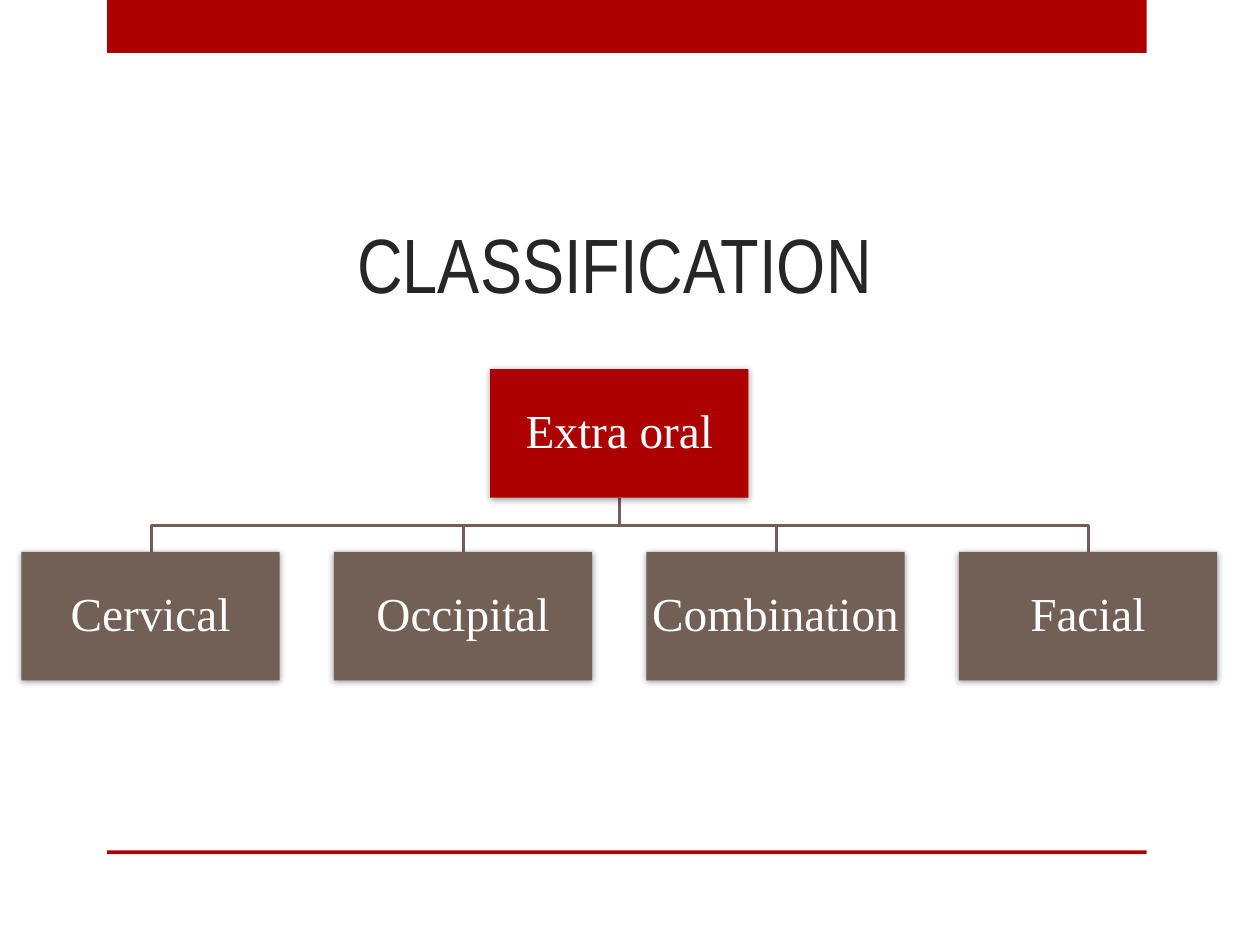
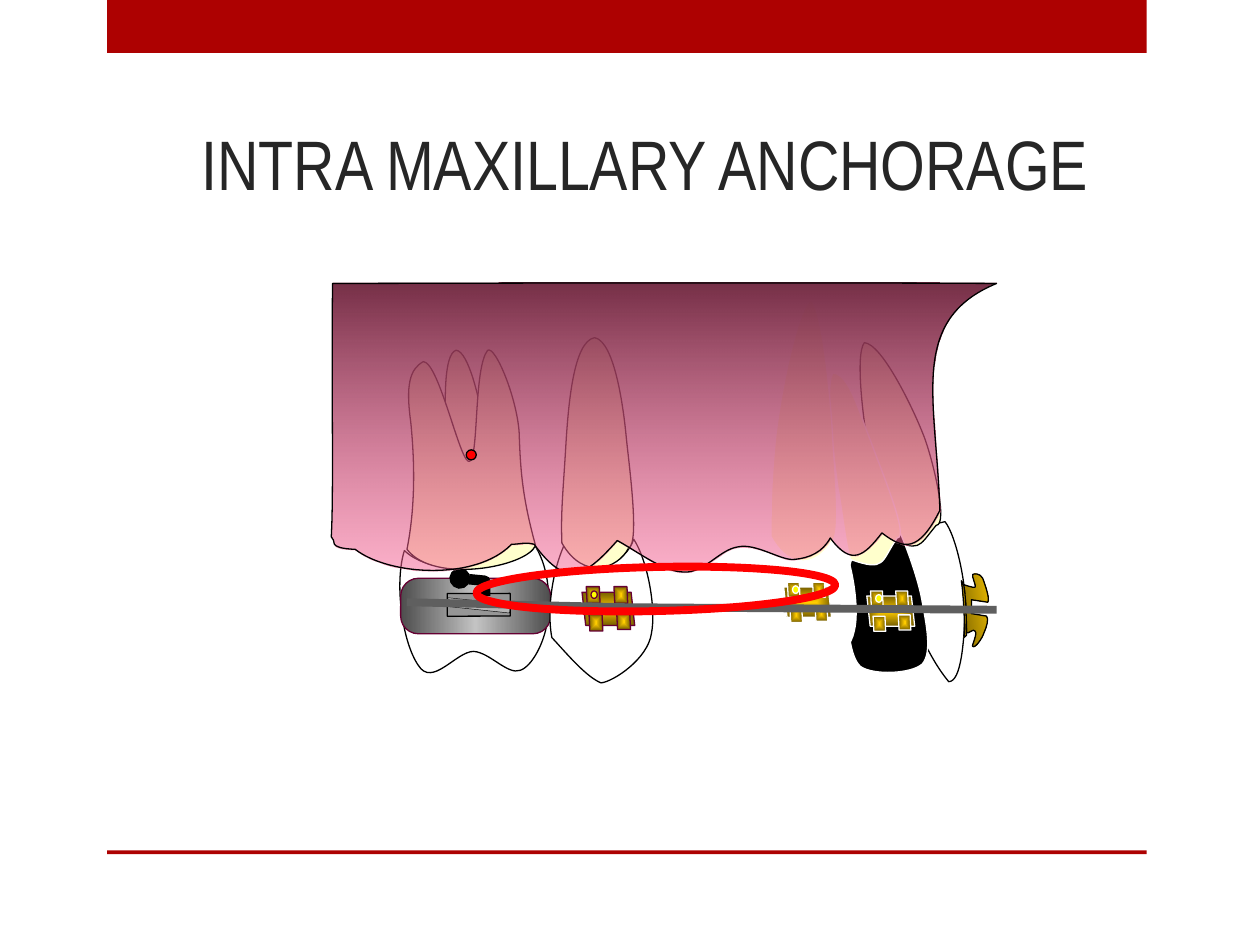
from dataclasses import dataclass
from itertools import islice
from math import cos, radians, sin
from typing import Optional

from lxml.etree import SubElement
from pptx import Presentation
from pptx.dml.color import RGBColor
from pptx.enum.shapes import MSO_SHAPE
from pptx.enum.text import MSO_ANCHOR, PP_ALIGN
from pptx.oxml.ns import qn
from pptx.util import Cm, Pt

RED = RGBColor(0xAD, 0x01, 0x01)
TAUPE = RGBColor(0x72, 0x60, 0x56)
INK = RGBColor(0x26, 0x26, 0x26)
WHITE = RGBColor(0xFF, 0xFF, 0xFF)
BLACK = RGBColor(0x00, 0x00, 0x00)
IVORY = RGBColor(0xFF, 0xFF, 0xCC)
GOLD = RGBColor(0xFF, 0xCC, 0x00)
DARK_GOLD = RGBColor(0x76, 0x5E, 0x00)
YELLOW = RGBColor(0xFF, 0xFF, 0x00)
PLUM = RGBColor(0x66, 0x00, 0x33)
DARK_STEEL = RGBColor(0x4D, 0x4D, 0x4D)
STEEL = RGBColor(0xC3, 0xC3, 0xC3)
SLOT_GREY = RGBColor(0x96, 0x96, 0x96)
WIRE_GREY = RGBColor(0x5F, 0x5F, 0x5F)
GUM_DARK = RGBColor(0x76, 0x2F, 0x47)
GUM_PINK = RGBColor(0xFF, 0x66, 0x99)
ELASTIC_RED = RGBColor(0xFF, 0x00, 0x00)


@dataclass
class Gradient:
    """Stops are (percent, colour, opacity percent); no angle means centre outwards."""
    stops: tuple
    angle: Optional[int] = None


HOOK_GOLD = Gradient(((0, DARK_GOLD, 100), (100, GOLD, 100)), 0)
BRACKET_GOLD = Gradient(((0, GOLD, 100), (100, DARK_GOLD, 100)))
BAND_STEEL = Gradient(((0, DARK_STEEL, 100), (50, STEEL, 100), (100, DARK_STEEL, 100)), 0)
GUM = Gradient(((0, GUM_DARK, 100), (100, GUM_PINK, 50)), 90)

# Outlines in inches: a start point, then lines (x, y) and cubic curves (three points).
INCISOR_CROWN = [
    (7.12, 4.23), (7.04, 4.35, 7.01, 4.68, 7.08, 4.88), (7.35, 4.98, 7.31, 5.14, 7.53, 5.41),
    (7.63, 5.41, 7.65, 5.09, 7.66, 4.88), (7.68, 4.67, 7.59, 4.25, 7.5, 4.14), (7.12, 4.23)]
INCISOR_ROOT = [
    (6.92, 3.71), (6.98, 3.99, 6.98, 4.05, 7.04, 4.27), (7.31, 4.38, 7.28, 4.35, 7.43, 4.17),
    (7.53, 4.17, 7.4, 3.62, 7.32, 3.43), (7.24, 3.23, 7, 2.73, 6.86, 2.72),
    (6.78, 2.82, 6.86, 3.43, 6.92, 3.71)]
INCISOR_HOOK = [
    (7.65, 4.64), (7.65, 4.64, 7.73, 4.67, 7.74, 4.66), (7.75, 4.65, 7.71, 4.57, 7.72, 4.56),
    (7.73, 4.55, 7.78, 4.55, 7.8, 4.59), (7.81, 4.62, 7.86, 4.75, 7.84, 4.78), (7.71, 4.76),
    (7.71, 4.87), (7.83, 4.89), (7.85, 4.91, 7.83, 4.98, 7.81, 5.02),
    (7.8, 5.06, 7.74, 5.15, 7.72, 5.13), (7.71, 5.13, 7.76, 5.03, 7.74, 5.01),
    (7.73, 4.98, 7.68, 5.04, 7.67, 5.02), (7.67, 4.84), (7.65, 4.64)]
INCISOR_PAD = [
    (7.65, 4.65), (7.64, 4.64, 7.65, 4.62, 7.63, 4.61), (7.65, 4.74, 7.66, 5, 7.65, 5.06),
    (7.68, 5.04, 7.67, 5.04, 7.67, 5.03), (7.67, 5, 7.67, 4.75, 7.65, 4.65)]
MOLAR_CROWN = [
    (3.21, 4.37), (3.13, 4.62, 3.19, 5.09, 3.32, 5.28), (3.43, 5.46, 3.62, 5.17, 3.76, 5.17),
    (3.89, 5.18, 4.03, 5.36, 4.13, 5.32), (4.22, 5.29, 4.33, 5.1, 4.35, 4.89),
    (4.37, 4.68, 4.34, 4.44, 4.21, 4.28), (4.16, 4.49, 3.47, 4.62, 3.21, 4.37)]
MOLAR_BACK_ROOT = [
    (3.54, 3.45), (3.56, 3.71, 3.56, 3.83, 3.59, 4.01), (3.72, 4.22, 3.87, 4.13, 3.91, 4),
    (3.96, 3.97, 3.86, 3.5, 3.83, 3.34), (3.81, 3.19, 3.72, 2.79, 3.62, 2.78),
    (3.52, 2.81, 3.53, 3.19, 3.54, 3.45)]
MOLAR_ROOTS = [
    (3.73, 3.66), (3.66, 3.72, 3.49, 2.88, 3.36, 2.87), (3.25, 2.93, 3.22, 3.06, 3.26, 3.35),
    (3.29, 3.65, 3.3, 4.01, 3.23, 4.36), (3.44, 4.64, 4.18, 4.5, 4.25, 4.33),
    (4.14, 3.93, 4.13, 3.71, 4.12, 3.43), (4.1, 3.15, 3.93, 2.74, 3.87, 2.78),
    (3.76, 2.92, 3.8, 3.61, 3.73, 3.66)]
MOLAR_HOOK = [(3.85, 4.73), (3.85, 4.61), (3.65, 4.59)]
LATERAL_CROWN = [
    (7.14, 4.22), (7.19, 4.33, 7.29, 4.6, 7.32, 4.78), (7.35, 4.95, 7.4, 5.18, 7.32, 5.27),
    (7.23, 5.35, 6.93, 5.36, 6.83, 5.29), (6.74, 5.21, 6.73, 4.95, 6.72, 4.8),
    (6.71, 4.66, 6.73, 4.49, 6.77, 4.42), (6.81, 4.36, 6.91, 4.44, 6.97, 4.41),
    (7.03, 4.38, 7.11, 4.26, 7.14, 4.22)]
LATERAL_ROOT = [
    (6.65, 3.87), (6.68, 4.02, 6.71, 4.31, 6.75, 4.44), (7.03, 4.54, 6.99, 4.46, 7.12, 4.27),
    (7.22, 4.27, 7, 3.75, 6.91, 3.5), (6.81, 3.25, 6.74, 2.97, 6.61, 2.96),
    (6.54, 3.07, 6.63, 3.71, 6.65, 3.87)]
CANINE_CROWN = [
    (6.17, 4.25), (6.05, 4.49, 5.98, 4.88, 6.01, 5.09), (6.12, 5.22, 6.21, 5.39, 6.33, 5.5),
    (6.43, 5.49, 6.74, 5.21, 6.78, 5.01), (6.83, 4.81, 6.75, 4.38, 6.64, 4.21),
    (6.57, 4.4, 6.39, 4.53, 6.17, 4.25)]
CANINE_ROOT = [
    (6.15, 3.54), (6.12, 3.88, 6.12, 4.02, 6.12, 4.26), (6.28, 4.55, 6.5, 4.47, 6.6, 4.3),
    (6.68, 4.26, 6.62, 3.7, 6.61, 3.49), (6.6, 3.28, 6.54, 2.5, 6.44, 2.38),
    (6.33, 2.43, 6.18, 3.19, 6.15, 3.54)]
PREMOLAR_CROWN = [
    (4.49, 4.3), (4.38, 4.53, 4.34, 4.85, 4.38, 5.06), (4.5, 5.19, 4.65, 5.37, 4.77, 5.42),
    (4.87, 5.41, 5.14, 5.23, 5.17, 5.03), (5.21, 4.83, 5.14, 4.45, 5.03, 4.28),
    (4.96, 4.48, 4.72, 4.58, 4.49, 4.3)]
PREMOLAR_ROOT = [
    (4.49, 3.56), (4.47, 3.9, 4.45, 4.07, 4.46, 4.31), (4.63, 4.61, 4.9, 4.52, 4.99, 4.35),
    (5.08, 4.31, 4.99, 3.67, 4.97, 3.46), (4.95, 3.25, 4.88, 2.71, 4.72, 2.68),
    (4.55, 2.71, 4.51, 3.22, 4.49, 3.56)]
GUM_OUTLINE = [
    (2.63, 4.26), (2.68, 4.29, 2.58, 4.35, 2.82, 4.36), (3.09, 4.57, 3.78, 4.61, 4.06, 4.32),
    (4.13, 4.32, 4.17, 4.3, 4.24, 4.32), (4.5, 4.68, 4.65, 4.57, 4.9, 4.29),
    (5.08, 4.39, 5.27, 4.54, 5.43, 4.54), (5.59, 4.55, 5.71, 4.36, 5.86, 4.34),
    (6, 4.31, 6.2, 4.45, 6.3, 4.44), (6.43, 4.43, 6.53, 4.38, 6.59, 4.27),
    (6.76, 4.5, 6.86, 4.41, 7, 4.23), (7.17, 4.36, 7.29, 4.39, 7.46, 4.05),
    (7.43, 3.15, 7.21, 2.54, 7.91, 2.25), (5.88, 2.24, 3.32, 2.25, 2.64, 2.25),
    (2.63, 3.01, 2.65, 3.91, 2.63, 4.26)]
ARCH_WIRE = [(3.23, 4.78), (4.97, 4.82), (7.91, 4.84)]


def inches(*values):
    return [Cm(value * 2.54) for value in values]


def turn(x, y, degrees):
    angle = radians(degrees)
    return x * cos(angle) - y * sin(angle), x * sin(angle) + y * cos(angle)


def add_colour(parent, colour, opacity):
    element = SubElement(parent, qn("a:srgbClr"), {"val": str(colour)})
    if opacity < 100:
        SubElement(element, qn("a:alpha"), {"val": str(opacity * 1000)})


def apply(target, formats):
    for name, value in formats.items():
        setattr(target, name, value)


class Deck:
    title_font = "Arial Narrow"
    body_font = "Times New Roman"

    def __init__(self):
        self.presentation = Presentation()
        self.presentation.slide_width, self.presentation.slide_height = inches(10, 7.5)
        self.slide = None

    def start_slide(self):
        self.slide = self.presentation.slides.add_slide(self.presentation.slide_layouts[6])
        for top, height in ((0, 0.42), (6.75, 0.03)):
            self.shape(MSO_SHAPE.RECTANGLE, (0.85, top, 8.25, height), RED)

    def paint(self, shape, fill, line, width):
        shape.shadow.inherit = False
        if isinstance(fill, Gradient):
            shape.fill.gradient()
            gradient = shape._element.spPr.find(qn("a:gradFill"))
            for child in list(gradient):
                gradient.remove(child)
            stops = SubElement(gradient, qn("a:gsLst"))
            for position, colour, opacity in fill.stops:
                stop = SubElement(stops, qn("a:gs"), {"pos": str(position * 1000)})
                add_colour(stop, colour, opacity)
            if fill.angle is None:
                centre = SubElement(gradient, qn("a:path"), {"path": "shape"})
                SubElement(centre, qn("a:fillToRect"), dict.fromkeys("ltrb", "50000"))
            else:
                SubElement(gradient, qn("a:lin"), {"ang": str(fill.angle * 60000), "scaled": "1"})
        elif fill is None:
            shape.fill.background()
        else:
            shape.fill.solid()
            shape.fill.fore_color.rgb = fill
        if line is None:
            shape.line.fill.background()
        else:
            shape.line.color.rgb = line
            shape.line.width = Pt(width)

    def shape(self, kind, box, fill=None, line=None, width=0.75, rotation=0, adjust=None):
        shape = self.slide.shapes.add_shape(kind, *inches(*box))
        shape.rotation = rotation
        if adjust is not None:
            shape.adjustments[0] = adjust
        self.paint(shape, fill, line, width)
        return shape

    def outline(self, steps, fill=None, line=BLACK, width=0.75, close=True, rotation=0):
        """Draw steps where they stand, inside a frame turned by rotation."""
        points = [inches(*turn(*step[i:i + 2], -rotation))
                  for step in steps for i in range(0, len(step), 2)]
        builder = self.slide.shapes.build_freeform(*points[0])
        builder.add_line_segments(points[1:], close=close)
        shape = builder.convert_to_shape()
        segments = iter(list(shape._element.spPr.iter(qn("a:lnTo"))))
        for step in steps[1:]:
            first, *others = islice(segments, len(step) // 2)
            if others:
                first.tag = qn("a:cubicBezTo")
            for other in others:
                first.append(other[0])
                other.getparent().remove(other)
        half_width, half_height = shape.width / 2, shape.height / 2
        x, y = turn(shape.left + half_width, shape.top + half_height, rotation)
        apply(shape, {"left": round(x - half_width), "top": round(y - half_height),
                      "rotation": rotation})
        self.paint(shape, fill, line, width)
        return shape

    def text(self, shape, words, colour, font, frame, paragraph):
        apply(shape.text_frame, frame)
        line = shape.text_frame.paragraphs[0]
        line.text = words
        apply(line, paragraph)
        apply(line.font, font)
        line.font.color.rgb = colour

    def title(self, words, box, size, alignment):
        holder = self.slide.shapes.add_textbox(*inches(*box))
        self.text(holder, words, INK, {"name": self.title_font, "size": Pt(size)},
                  {"word_wrap": True, "vertical_anchor": MSO_ANCHOR.BOTTOM},
                  {"alignment": alignment})

    def node(self, words, left, top, fill):
        node = self.shape(MSO_SHAPE.RECTANGLE, (left, top, 2.05, 1.02), fill)
        effects = node._element.spPr.find(qn("a:effectLst"))
        shadow = SubElement(effects, qn("a:outerShdw"), {
            "blurRad": str(Pt(4)), "dist": str(Pt(1)), "dir": str(88 * 60000), "rotWithShape": "0"})
        add_colour(shadow, BLACK, 40)
        margins = dict.fromkeys(
            ("margin_left", "margin_top", "margin_right", "margin_bottom"), Cm(0.05))
        self.text(node, words, WHITE, {"name": self.body_font, "size": Pt(27)},
                  {"word_wrap": True, "vertical_anchor": MSO_ANCHOR.MIDDLE, **margins},
                  {"alignment": PP_ALIGN.CENTER, "line_spacing": 0.9})

    def bracket(self, left, top, line, scale=1.0):
        """Draw a base plate, four wings and a marker dot."""
        plates = [(0, 0, 0.38, 0.24, 0.11)]
        plates += [(x, y, 0.1, 0.12, 0.06)
                   for x, y in ((0.03, -0.04), (0.05, 0.16), (0.25, 0.15), (0.23, -0.04))]
        for x, y, width, height, slant in plates:
            plate = self.shape(
                MSO_SHAPE.PARALLELOGRAM,
                (left + x * scale, top + y * scale, width * scale, height * scale),
                BRACKET_GOLD, line, adjust=slant)
            plate._element.spPr.xfrm.set("flipH", "1")
        self.shape(MSO_SHAPE.OVAL, (left + 0.07, top - 0.01, 0.05, 0.06), YELLOW, line)


def classification(deck):
    deck.start_slide()
    deck.title("CLASSIFICATION", (1.17, 1.33, 7.42, 1.17), 44, PP_ALIGN.CENTER)
    kinds = ("Cervical", "Occipital", "Combination", "Facial")
    lefts = [0.17 + 2.48 * i for i in range(len(kinds))]
    middle, bus = 4.92, 4.17
    for left in reversed(lefts):
        centre = left + 1.03
        deck.outline([(middle, 3.95), (middle, bus), (centre, bus), (centre, 4.38)],
                     line=TAUPE, width=1.75, close=False)
    deck.node("Extra oral", 3.89, 2.93, RED)
    for kind, left in zip(kinds, lefts):
        deck.node(kind, left, 4.38, TAUPE)


def intra_maxillary(deck):
    deck.start_slide()
    deck.title("INTRA MAXILLARY ANCHORAGE", (1.5, 0.42, 9.42, 1.25), 40, PP_ALIGN.LEFT)
    for part, fill, rotation in (
            (INCISOR_CROWN, WHITE, 14), (INCISOR_ROOT, IVORY, 14),
            (INCISOR_HOOK, HOOK_GOLD, 351.6), (INCISOR_PAD, HOOK_GOLD, 351.6),
            (MOLAR_CROWN, WHITE, 0), (MOLAR_BACK_ROOT, IVORY, 354), (MOLAR_ROOTS, IVORY, 354)):
        deck.outline(part, fill, rotation=rotation)
    deck.shape(MSO_SHAPE.ROUNDED_RECTANGLE, (3.18, 4.59, 1.19, 0.44), BAND_STEEL, PLUM,
               adjust=0.32)
    deck.shape(MSO_SHAPE.RECTANGLE, (3.55, 4.71, 0.5, 0.18), SLOT_GREY, BLACK, rotation=359.8)
    glint = deck.shape(MSO_SHAPE.RECTANGLE, (3.55, 4.77, 0.5, 0.07), WHITE, BLACK, 0.25, 6)
    glint_colour = glint._element.spPr.find(qn("a:solidFill"))[0]
    SubElement(glint_colour, qn("a:alpha"), {"val": "30000"})
    hook = deck.outline(MOLAR_HOOK, width=6, close=False)
    SubElement(hook._element.spPr.find(qn("a:ln")), qn("a:tailEnd"),
               {"type": "oval", "w": "sm", "len": "sm"})
    for crown, root, fill, line, rotation, bracket in (
            (LATERAL_CROWN, LATERAL_ROOT, BLACK, WHITE, 0, (6.88, 4.73, WHITE)),
            (CANINE_CROWN, CANINE_ROOT, WHITE, WHITE, 7.2, (6.22, 4.66, WHITE)),
            (PREMOLAR_CROWN, PREMOLAR_ROOT, WHITE, BLACK, 0, (4.62, 4.7, PLUM, 1.1))):
        deck.outline(crown, fill, line, rotation=rotation)
        deck.outline(root, IVORY, line, rotation=rotation)
        deck.bracket(*bracket)
    deck.outline(GUM_OUTLINE, GUM)
    deck.shape(MSO_SHAPE.OVAL, (3.7, 3.57, 0.08, 0.08), ELASTIC_RED, BLACK)
    deck.outline(ARCH_WIRE, line=WIRE_GREY, width=4.5, close=False)
    deck.shape(MSO_SHAPE.OVAL, (3.78, 4.5, 2.85, 0.35), None, ELASTIC_RED, 4.5, rotation=358.7)


def main():
    deck = Deck()
    classification(deck)
    intra_maxillary(deck)
    deck.presentation.save("out.pptx")


if __name__ == "__main__":
    main()
